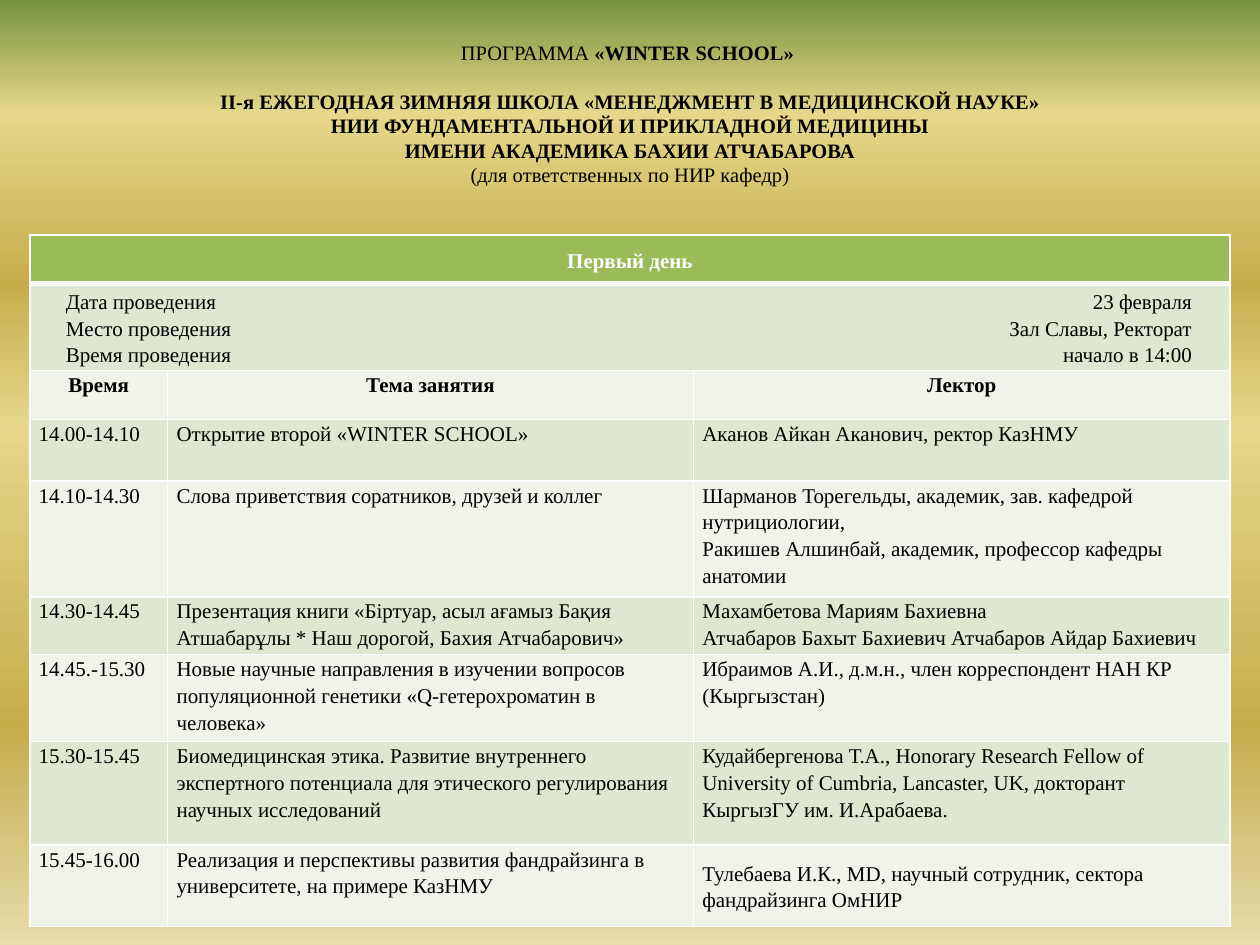
"""Builds the first-day programme slide of the Winter School."""
import copy
from dataclasses import dataclass

import pptx
import pptx.dml.color
import pptx.enum.text
import pptx.oxml
import pptx.oxml.ns
import pptx.util

Cm = pptx.util.Cm
Pt = pptx.util.Pt
qn = pptx.oxml.ns.qn
RGB = pptx.dml.color.RGBColor.from_string
Align = pptx.enum.text.PP_ALIGN
Anchor = pptx.enum.text.MSO_ANCHOR


@dataclass(frozen=True)
class Theme:
    font: str = "Times New Roman"
    title_size: float = 11.7
    title_line: float = 14
    table_size: float = 12
    table_spacing: float = 1.15
    text: str = "000000"
    white: str = "FFFFFF"
    banner: str = "9BBB59"
    bands: tuple = ("EFF3EA", "DEE7D1")
    thin: float = 1
    thick: float = 3
    background: tuple = (
        (0, "77933C"), (0.12, "E6D78A"), (0.3, "C7AC4C"),
        (0.45, "E6D78A"), (0.77, "C7AC4C"), (1, "E6DCAC"),
    )


THEME = Theme()

TITLE = [
    [("ПРОГРАММА ", False), ("«WINTER SCHOOL» ", True)],
    [("II-я ЕЖЕГОДНАЯ ЗИМНЯЯ ШКОЛА «МЕНЕДЖМЕНТ В МЕДИЦИНСКОЙ НАУКЕ»", True)],
    [("НИИ ФУНДАМЕНТАЛЬНОЙ И ПРИКЛАДНОЙ МЕДИЦИНЫ", True)],
    [("ИМЕНИ АКАДЕМИКА БАХИИ АТЧАБАРОВА", True)],
    [("(для ответственных по НИР кафедр)", False)],
]
DAY = "Первый день"
DETAILS = [
    ("Дата проведения", "23 февраля"),
    ("Место проведения", "Зал Славы, Ректорат"),
    ("Время проведения", "начало в 14:00"),
]
HEADINGS = ("Время", "Тема занятия", "Лектор")
SESSIONS = [
    ("14.00-14.10", "Открытие второй «WINTER SCHOOL»",
     "Аканов Айкан Аканович, ректор КазНМУ"),
    ("14.10-14.30", "Слова приветствия соратников, друзей и коллег",
     "Шарманов Торегельды, академик, зав. кафедрой нутрициологии,\n"
     "Ракишев Алшинбай, академик, профессор кафедры анатомии"),
    ("14.30-14.45",
     "Презентация книги «Біртуар, асыл ағамыз Бақия Атшабарұлы * Наш дорогой, Бахия Атчабарович»",
     "Махамбетова Мариям Бахиевна\nАтчабаров Бахыт Бахиевич Атчабаров Айдар Бахиевич"),
    ("14.45.-15.30",
     "Новые научные направления в изучении вопросов популяционной генетики "
     "«Q-гетерохроматин в человека»",
     "Ибраимов А.И., д.м.н., член корреспондент НАН КР (Кыргызстан)"),
    ("15.30-15.45",
     "Биомедицинская этика. Развитие внутреннего экспертного потенциала "
     "для этического регулирования научных исследований",
     "Кудайбергенова Т.А., Honorary Research Fellow of University of Cumbria, "
     "Lancaster, UK, докторант КыргызГУ им. И.Арабаева."),
    ("15.45-16.00",
     "Реализация и перспективы развития фандрайзинга в университете, на примере КазНМУ",
     "Тулебаева И.К., MD, научный сотрудник, сектора фандрайзинга ОмНИР"),
]
COLUMN_WIDTHS = (2.78, 10.6, 10.82)
ROW_HEIGHTS = (0.98, 0.98, 0.98, 1.24, 0.97, 0.97, 0.97, 2.08, 1.65)
TABLE_HEIGHT = 13.97
DETAILS_INDENT = 0.73
DETAILS_TAB = 22.7


def style_run(run, size, color, bold):
    run.font.name = THEME.font
    run.font.size = Pt(size)
    run.font.color.rgb = RGB(color)
    run.font.bold = bold


def paint_background(slide):
    fill = slide.background.fill
    fill.gradient()
    fill.gradient_angle = 270
    stop_list = slide.element.find(".//" + qn("a:gsLst"))
    while len(stop_list) < len(THEME.background):
        stop_list.append(copy.deepcopy(stop_list[0]))
    for stop, (position, color) in zip(fill.gradient_stops, THEME.background):
        stop.position = position
        stop.color.rgb = RGB(color)


def add_title(slide):
    shape = slide.shapes.add_textbox(Cm(1.27), Cm(0.68), Cm(22.86), Cm(4))
    shape.text_frame.word_wrap = True
    shape.text_frame.text = "\n" * (len(TITLE) - 1)
    for paragraph, parts in zip(shape.text_frame.paragraphs, TITLE):
        paragraph.alignment = Align.CENTER
        paragraph.line_spacing = Pt(THEME.title_line)
        for text, bold in parts:
            run = paragraph.add_run()
            run.text = text
            style_run(run, THEME.title_size, THEME.text, bold)
    shape.text_frame.paragraphs[0].space_after = Pt(THEME.title_line)


def set_borders(cell, top, bottom):
    properties = cell._tc.get_or_add_tcPr()
    widths = {"lnL": THEME.thin, "lnR": THEME.thin, "lnT": top, "lnB": bottom}
    for index, (side, width) in enumerate(widths.items()):
        properties.insert(index, pptx.oxml.parse_xml(
            f'<a:{side} {pptx.oxml.ns.nsdecls("a")} w="{Pt(width)}"><a:solidFill>'
            f'<a:srgbClr val="{THEME.white}"/></a:solidFill></a:{side}>'))


def fill_cell(cell, text, fill, color=THEME.text, bold=False, align=Align.LEFT):
    cell.fill.solid()
    cell.fill.fore_color.rgb = RGB(fill)
    cell.margin_left = cell.margin_right = Cm(0.18)
    cell.margin_top = cell.margin_bottom = 0
    cell.text_frame.text = text
    for paragraph in cell.text_frame.paragraphs:
        paragraph.alignment = align
        paragraph.line_spacing = THEME.table_spacing
        for run in paragraph.runs:
            style_run(run, THEME.table_size, color, bold)


def add_right_tab(paragraph, position):
    paragraph._p.get_or_add_pPr().append(pptx.oxml.parse_xml(
        f'<a:tabLst {pptx.oxml.ns.nsdecls("a")}>'
        f'<a:tab pos="{Cm(position)}" algn="r"/></a:tabLst>'))


def add_programme(slide):
    shape = slide.shapes.add_table(
        len(ROW_HEIGHTS), len(COLUMN_WIDTHS), Cm(0.6), Cm(4.74),
        Cm(sum(COLUMN_WIDTHS)), Cm(TABLE_HEIGHT))
    table = shape.table
    table.horz_banding = False
    for column, width in zip(table.columns, COLUMN_WIDTHS):
        column.width = Cm(width)
    for row, height in zip(table.rows, ROW_HEIGHTS):
        row.height = Cm(height)
    shape.height = Cm(TABLE_HEIGHT)

    banner, details = table.cell(0, 0), table.cell(1, 0)
    for row, cell in enumerate((banner, details)):
        cell.merge(table.cell(row, len(COLUMN_WIDTHS) - 1))
        cell.vertical_anchor = Anchor.MIDDLE
    fill_cell(banner, DAY, THEME.banner, THEME.white, True, Align.CENTER)
    fill_cell(details, "\n".join("\t".join(pair) for pair in DETAILS), THEME.bands[1])
    details.margin_left = Cm(DETAILS_INDENT)
    for paragraph in details.text_frame.paragraphs:
        add_right_tab(paragraph, DETAILS_TAB)

    for index, texts in enumerate([HEADINGS] + SESSIONS):
        heading = index == 0
        for column, text in enumerate(texts):
            fill_cell(table.cell(index + 2, column), text, THEME.bands[index % 2],
                      bold=heading, align=Align.CENTER if heading else Align.LEFT)
    table.cell(len(ROW_HEIGHTS) - 1, 2).vertical_anchor = Anchor.MIDDLE

    for index, row in enumerate(table.rows):
        for cell in row.cells:
            set_borders(cell, THEME.thick if index == 1 else THEME.thin,
                        THEME.thick if index == 0 else THEME.thin)


def main():
    presentation = pptx.Presentation()
    presentation.slide_width, presentation.slide_height = Cm(25.4), Cm(19.05)
    slide = presentation.slides.add_slide(presentation.slide_layouts[6])
    paint_background(slide)
    add_title(slide)
    add_programme(slide)
    presentation.save("out.pptx")


if __name__ == "__main__":
    main()
